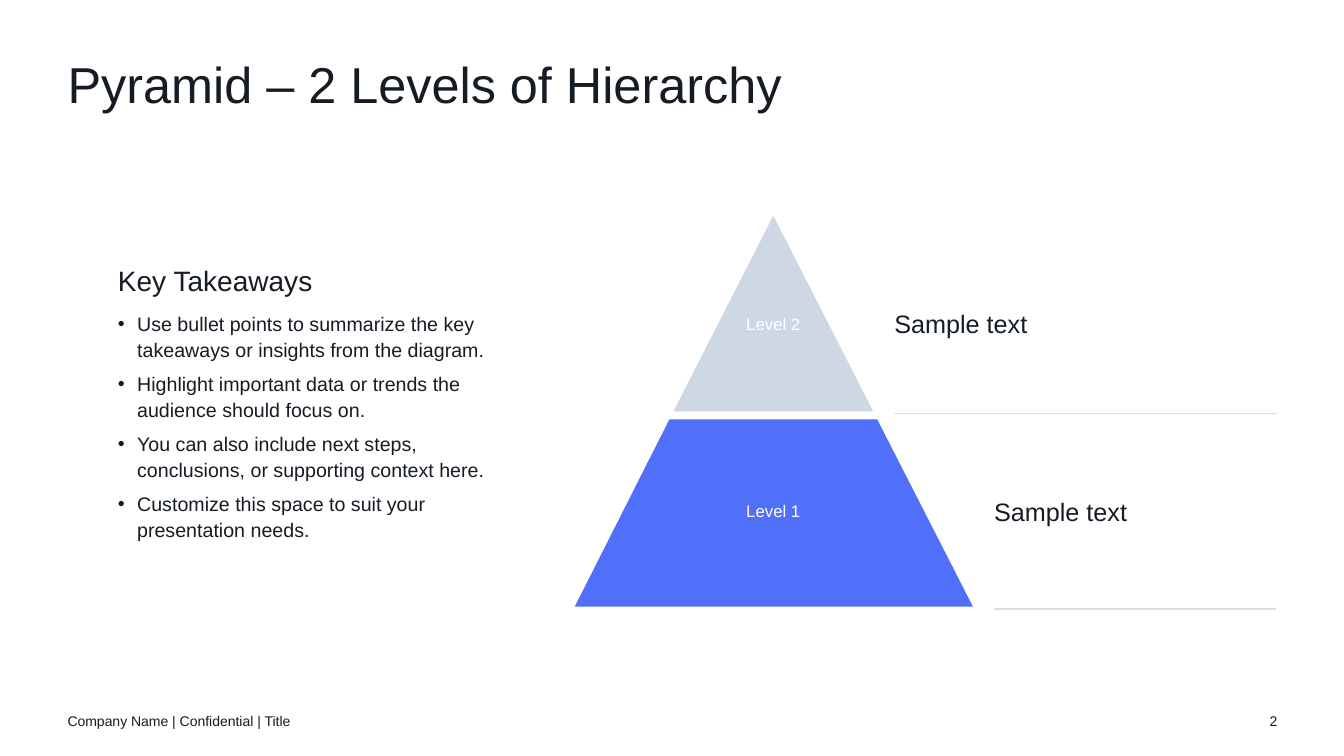
"""Build a slide with a two-level pyramid and key takeaways."""
from lxml import etree
from pptx import Presentation, util as u
from pptx.dml.color import RGBColor
from pptx.enum import shapes, text
from pptx.oxml import ns

INK = "151C23"
WHITE = "FFFFFF"
RULE = "D9DEE5"
BULLETS = [
    "Use bullet points to summarize the key takeaways or insights from the diagram.",
    "Highlight important data or trends the audience should focus on.",
    "You can also include next steps, conclusions, or supporting context here.",
    "Customize this space to suit your presentation needs.",
]
LEVELS = [
    ("Level 2", "CED8E4", [(7.67, 2.14), (6.68, 4.08), (8.66, 4.08)], 3.06, 8.87, 4.1, 12.67),
    ("Level 1", "5070FA", [(5.7, 6.02), (9.65, 6.02), (8.7, 4.16), (6.64, 4.16)], 4.92, 9.86, 6.04, 12.66),
]


def color(value):
    return RGBColor.from_string(value)


def add_text(box, lines, size, ink=INK, align=text.PP_ALIGN.LEFT, anchor=text.MSO_ANCHOR.MIDDLE):
    shape = slide.shapes.add_textbox(*[u.Inches(length) for length in box])
    frame = shape.text_frame
    frame.word_wrap = True
    frame.vertical_anchor = anchor
    frame.margin_left = frame.margin_right = frame.margin_top = frame.margin_bottom = 0
    frame.text = "\n".join(lines)
    for paragraph in frame.paragraphs:
        paragraph.alignment = align
        for run in paragraph.runs:
            run.font.name = "Arial"
            run.font.size = u.Pt(size)
            run.font.color.rgb = color(ink)
    return frame.paragraphs


presentation = Presentation()
presentation.slide_width = u.Inches(13.33)
presentation.slide_height = u.Inches(7.5)
slide = presentation.slides.add_slide(presentation.slide_layouts[6])

title = add_text((0.67, 0.6, 12, 0.6), ["Pyramid – 2 Levels of Hierarchy"], 36, anchor=text.MSO_ANCHOR.TOP)
title[0].line_spacing = 0.9

for name, fill, points, text_top, text_left, rule_top, rule_right in LEVELS:
    corners = [(u.Inches(x), u.Inches(y)) for x, y in points]
    builder = slide.shapes.build_freeform(*corners[0])
    builder.add_line_segments(corners[1:], close=True)
    level = builder.convert_to_shape()
    level.shadow.inherit = False
    level.fill.solid()
    level.fill.fore_color.rgb = color(fill)
    level.line.fill.background()

    add_text((7.17, text_top, 1, 0.3), [name], 12, WHITE, text.PP_ALIGN.CENTER)
    add_text((text_left, text_top, 2.8, 0.3), ["Sample text"], 18)
    rule = slide.shapes.add_connector(
        shapes.MSO_CONNECTOR.STRAIGHT,
        u.Inches(text_left), u.Inches(rule_top), u.Inches(rule_right), u.Inches(rule_top),
    )
    rule.line.color.rgb = color(RULE)
    rule.line.width = u.Pt(1)
    etree.SubElement(rule._element.spPr, ns.qn("a:effectLst"))

heading, *bullets = add_text((1.17, 1.8, 3.99, 4.35), ["Key Takeaways", *BULLETS], 14)
for paragraph in (heading, *bullets):
    paragraph.line_spacing = 1.1
    paragraph.space_before = u.Pt(6)
heading.space_after = u.Pt(3)
heading.runs[0].font.size = u.Pt(20)
for bullet in bullets:
    properties = bullet._p.get_or_add_pPr()
    properties.set("marL", str(u.Inches(0.19)))
    properties.set("indent", str(-u.Inches(0.19)))
    etree.SubElement(properties, ns.qn("a:buFont")).set("typeface", "Arial")
    etree.SubElement(properties, ns.qn("a:buChar")).set("char", "•")

add_text((0.67, 6.95, 4.5, 0.4), ["Company Name | Confidential | Title"], 10)
add_text((12.17, 6.95, 0.5, 0.4), ["2"], 10, align=text.PP_ALIGN.RIGHT)

presentation.save("out.pptx")
